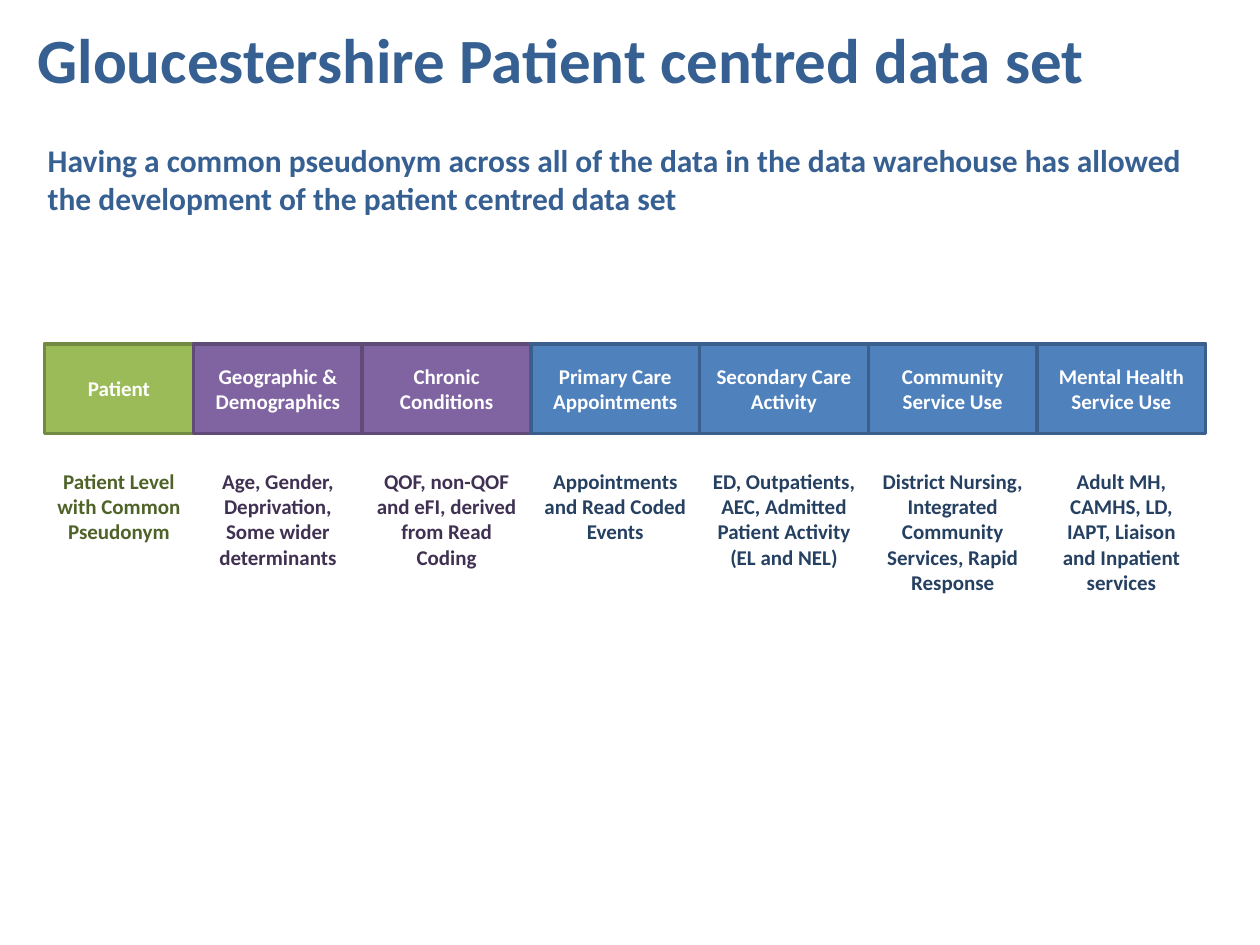
from pptx import Presentation
from pptx.dml.color import RGBColor
from pptx.enum.shapes import MSO_SHAPE as SHAPE
from pptx.enum.text import MSO_ANCHOR as ANCHOR, PP_ALIGN as ALIGN
from pptx.util import Pt

GREEN = ("9BBB59", "738A42", "4F6228")
PURPLE = ("8064A2", "5F4A78", "403152")
BLUE = ("4F81BD", "3A5F8C", "254061")
HEADING = "376092"
FIRST_W, COLUMN_W = 85.3, 96.4
HEADER_H, DETAIL_TOP, DETAIL_H = 51.1, 67.7, 73.4

COLUMNS = [
    ("Patient", "Patient Level with Common Pseudonym", GREEN),
    ("Geographic & Demographics",
     "Age, Gender, Deprivation, Some wider determinants", PURPLE),
    ("Chronic Conditions",
     "QOF, non-QOF and eFI, derived from Read Coding", PURPLE),
    ("Primary Care Appointments",
     "Appointments and Read Coded Events", BLUE),
    ("Secondary Care Activity",
     "ED, Outpatients, AEC, Admitted Patient Activity (EL and NEL)", BLUE),
    ("Community Service Use",
     "District Nursing, Integrated Community Services, Rapid Response", BLUE),
    ("Mental Health Service Use",
     "Adult MH, CAMHS, LD, IAPT, Liaison and Inpatient services", BLUE),
]


def rgb(value):
    """Turn a hex string into a colour."""
    return RGBColor.from_string(value)


def write(sp, text, size, color, align, anchor):
    """Fill a shape with one bold, wrapped paragraph."""
    tf = sp.text_frame
    tf.word_wrap = True
    tf.vertical_anchor = anchor
    p = tf.paragraphs[0]
    p.text = text
    p.alignment = align
    p.font.name = "Calibri"
    p.font.size = Pt(size)
    p.font.bold = True
    p.font.color.rgb = rgb(color)


def add_text(s, x, y, w, h, text, size, color, align=ALIGN.LEFT, anchor=ANCHOR.TOP):
    """Add a text box."""
    sp = s.shapes.add_textbox(Pt(x), Pt(y), Pt(w), Pt(h))
    write(sp, text, size, color, align, anchor)


def add_header(s, x, y, w, h, text, fill, line):
    """Add a coloured header cell."""
    sp = s.shapes.add_shape(SHAPE.RECTANGLE, Pt(x), Pt(y), Pt(w), Pt(h))
    sp.shadow.inherit = False
    sp.fill.solid()
    sp.fill.fore_color.rgb = rgb(fill)
    sp.line.color.rgb = rgb(line)
    sp.line.width = Pt(2)
    write(sp, text, 12, "FFFFFF", ALIGN.CENTER, ANCHOR.MIDDLE)


def add_headings(s, x, y, w):
    """Add the title and the statement below it."""
    add_text(s, x, y, w, 66.2, "Gloucestershire Patient centred data set",
             36, HEADING, anchor=ANCHOR.MIDDLE)
    add_text(s, x + 5.8, y + 77, w, 62.6,
             "Having a common pseudonym across all of the data in the data "
             "warehouse has allowed the development of the patient centred data set",
             18, HEADING)


def add_data_set(s, x, y):
    """Add the row of headers with a description under each."""
    for i, (name, detail, (fill, line, ink)) in enumerate(COLUMNS):
        w = COLUMN_W if i else FIRST_W
        add_header(s, x, y, w, HEADER_H, name, fill, line)
        add_text(s, x, y + DETAIL_TOP, w, DETAIL_H, detail, 12, ink, ALIGN.CENTER)
        x += w


def main():
    """Build and save the slide."""
    prs = Presentation()
    prs.slide_width, prs.slide_height = Pt(720), Pt(540)
    s = prs.slides.add_slide(prs.slide_layouts[6])
    add_headings(s, 14.4, 0, 674.6)
    add_data_set(s, 25.3, 196.5)
    prs.save("out.pptx")


if __name__ == "__main__":
    main()
